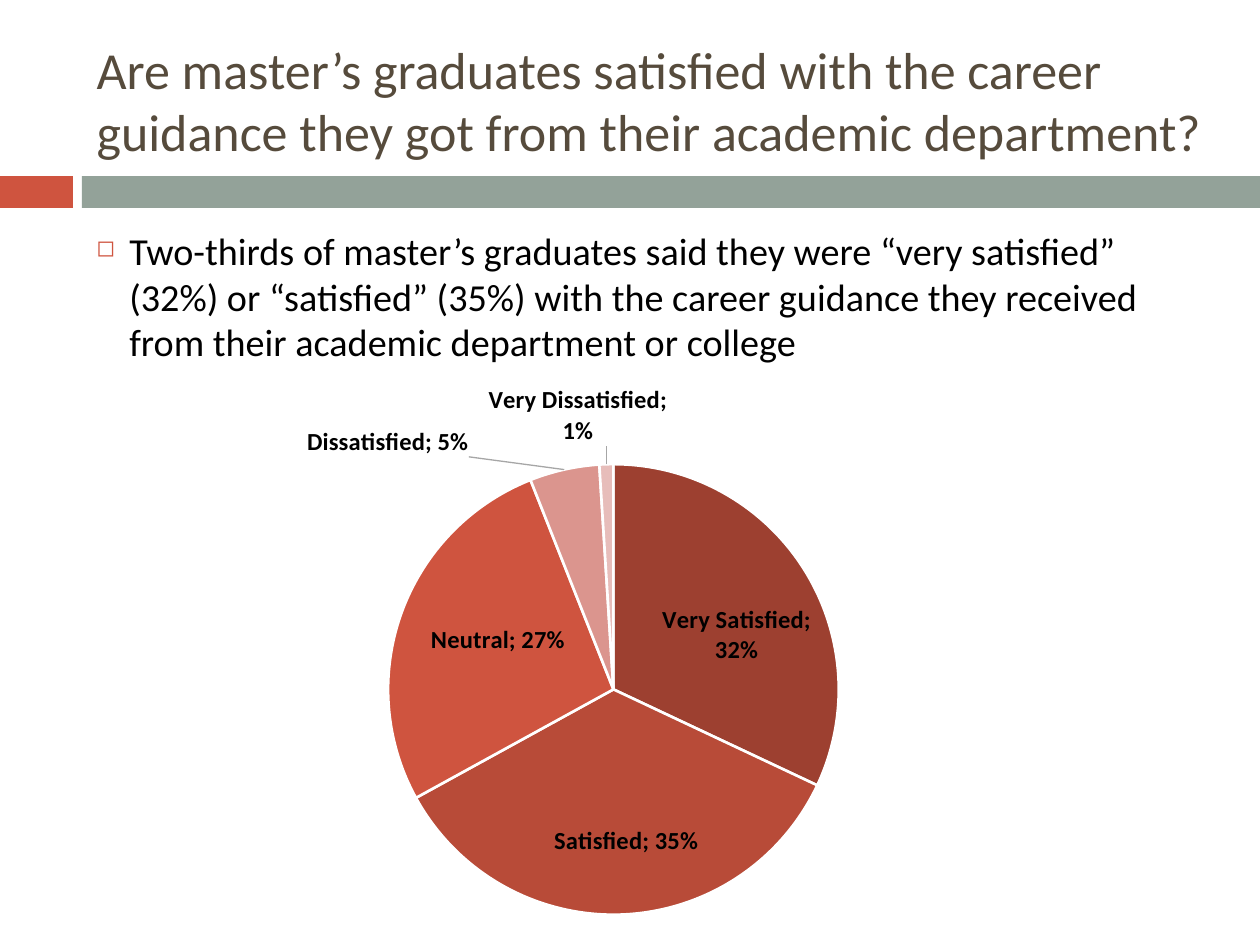
from copy import deepcopy
from dataclasses import dataclass

from lxml import etree
from pptx import Presentation
from pptx.chart.data import CategoryChartData
from pptx.dml.color import RGBColor
from pptx.enum.chart import XL_CHART_TYPE, XL_LABEL_POSITION
from pptx.enum.shapes import MSO_SHAPE
from pptx.enum.text import MSO_ANCHOR, MSO_AUTO_SIZE, PP_ALIGN
from pptx.oxml import parse_xml
from pptx.oxml.ns import nsdecls, qn
from pptx.util import Emu, Pt

PIE = XL_CHART_TYPE.PIE
BEST_FIT = XL_LABEL_POSITION.BEST_FIT
RECTANGLE = MSO_SHAPE.RECTANGLE
MIDDLE, TOP = MSO_ANCHOR.MIDDLE, MSO_ANCHOR.TOP
NO_AUTOFIT = MSO_AUTO_SIZE.NONE
LEFT = PP_ALIGN.LEFT

EMU_PER_PX = 914400 / 126
TITLE_ONLY = 5


@dataclass(frozen=True)
class Theme:
    font: str = "Calibri"
    accent: str = "CF543F"
    band: str = "93A299"
    title: str = "564B3C"
    text: str = "000000"
    background: str = "FFFFFF"
    leader: str = "A6A6A6"
    title_size: float = 29.7
    body_size: float = 21.8
    chart_size: float = 10
    label_size: float = 14


THEME = Theme()
TITLE = ("Are master’s graduates satisfied with the career guidance "
         "they got from their academic department?")
FINDING = ("Two-thirds of master’s graduates said they were “very satisfied” (32%) "
           "or “satisfied” (35%) with the career guidance they received from their "
           "academic department or college")
# category, share, colour, label anchor, label shift as a share of the chart
RATINGS = [
    ("Very Satisfied", 0.32, "9D4030", "ctr", (0.03, 0.01)),
    ("Satisfied", 0.35, "B84B38", "ctr", (0.01, 0.07)),
    ("Neutral", 0.27, "CF543F", "ctr", (-0.01, -0.02)),
    ("Dissatisfied", 0.05, "DB958E", "outEnd", (-0.1, -0.01)),
    ("Very Dissatisfied", 0.01, "E7BDBA", "outEnd", (-0.03, -0.02)),
]
PIE_AREA = {"x": 0.26, "y": 0.19, "w": 0.48, "h": 0.81}


def px(length):
    return Emu(round(length * EMU_PER_PX))


def rgb(value):
    return RGBColor.from_string(value)


def style_font(font, size, color, bold=False):
    font.name = THEME.font
    font.size = Pt(size)
    font.bold = bold
    font.color.rgb = rgb(color)


def write_text(frame, text, size, color, anchor):
    frame.word_wrap = True
    frame.auto_size = NO_AUTOFIT
    frame.vertical_anchor = anchor
    paragraph = frame.paragraphs[0]
    paragraph.alignment = LEFT
    run = paragraph.add_run()
    run.text = text
    style_font(run.font, size, color)
    return paragraph


def add_bar(slide, left, width, color):
    bar = slide.shapes.add_shape(RECTANGLE, px(left), px(176), px(width), px(32))
    bar.shadow.inherit = False
    bar.fill.solid()
    bar.fill.fore_color.rgb = rgb(color)
    bar.line.fill.background()


def set_title(slide):
    title = slide.shapes.title
    title.left, title.top, title.width, title.height = map(px, (84, 32, 1146, 136))
    write_text(title.text_frame, TITLE, THEME.title_size, THEME.title, MIDDLE)


def add_finding(slide):
    body = slide.shapes.add_textbox(px(84), px(221), px(1124), px(724))
    paragraph = write_text(body.text_frame, FINDING, THEME.body_size, THEME.text, TOP)
    paragraph.space_before = Pt(5.2)
    properties = paragraph._p.get_or_add_pPr()
    properties.set("marL", str(px(33)))
    properties.set("indent", str(px(-33)))
    color = etree.SubElement(properties, qn("a:buClr"))
    etree.SubElement(color, qn("a:srgbClr"), val=THEME.accent)
    etree.SubElement(properties, qn("a:buSzPct"), val="60000")
    etree.SubElement(properties, qn("a:buChar"), char="◻")


def manual_layout(position, inner=False):
    target = '<c:layoutTarget val="inner"/>' if inner else ""
    modes = '<c:xMode val="edge"/><c:yMode val="edge"/>' if inner else ""
    values = "".join(f'<c:{key} val="{value}"/>' for key, value in position.items())
    return parse_xml(f'<c:layout {nsdecls("c")}><c:manualLayout>{target}{modes}{values}'
                     '</c:manualLayout></c:layout>')


def place_plot(chart):
    plot_area = chart._chartSpace.chart.plotArea
    for layout in plot_area.findall(qn("c:layout")):
        plot_area.remove(layout)
    plot_area.insert(0, manual_layout(PIE_AREA, inner=True))


def label_slices(series):
    labels = series.data_labels
    labels.show_value = True
    labels.show_category_name = True
    labels.show_percentage = False
    labels.number_format = "0%"
    labels.number_format_is_linked = False
    labels.position = BEST_FIT
    style_font(labels.font, THEME.label_size, THEME.text, bold=True)

    group = labels._element
    for leader in group.findall(qn("c:showLeaderLines")):
        group.remove(leader)
    etree.SubElement(group, qn("c:separator")).text = "; "
    shared = list(group)
    for index, (_, _, _, anchor, (x, y)) in enumerate(RATINGS):
        label = etree.Element(qn("c:dLbl"))
        etree.SubElement(label, qn("c:idx"), val=str(index))
        label.append(manual_layout({"x": x, "y": y}))
        label.extend(deepcopy(part) for part in shared)
        label.find(qn("c:dLblPos")).set("val", anchor)
        group.insert(index, label)
    etree.SubElement(group, qn("c:showLeaderLines"), val="1")
    group.append(parse_xml(
        f'<c:leaderLines {nsdecls("c", "a")}><c:spPr><a:ln w="9525"><a:solidFill>'
        f'<a:srgbClr val="{THEME.leader}"/></a:solidFill></a:ln></c:spPr></c:leaderLines>'))


def add_satisfaction_pie(slide):
    data = CategoryChartData(number_format="0%")
    data.categories = [rating[0] for rating in RATINGS]
    data.add_series("Series 1", [rating[1] for rating in RATINGS])
    chart = slide.shapes.add_chart(PIE, px(144), px(357), px(939), px(559), data).chart
    chart.has_legend = False
    chart.has_title = False
    style_font(chart.font, THEME.chart_size, THEME.text)
    plot = chart.plots[0]
    plot.vary_by_categories = True
    series = plot.series[0]
    for index, (_, _, color, _, _) in enumerate(RATINGS):
        portion = series.points[index].format
        portion.fill.solid()
        portion.fill.fore_color.rgb = rgb(color)
        portion.line.color.rgb = rgb(THEME.background)
        portion.line.width = Pt(1.5)
    label_slices(series)
    place_plot(chart)


def main():
    presentation = Presentation()
    presentation.slide_width, presentation.slide_height = px(1260), px(945)
    slide = presentation.slides.add_slide(presentation.slide_layouts[TITLE_ONLY])
    slide.background.fill.solid()
    slide.background.fill.fore_color.rgb = rgb(THEME.background)
    add_bar(slide, 0, 73, THEME.accent)
    add_bar(slide, 82, 1178, THEME.band)
    set_title(slide)
    add_finding(slide)
    add_satisfaction_pie(slide)
    presentation.save("out.pptx")


if __name__ == "__main__":
    main()
